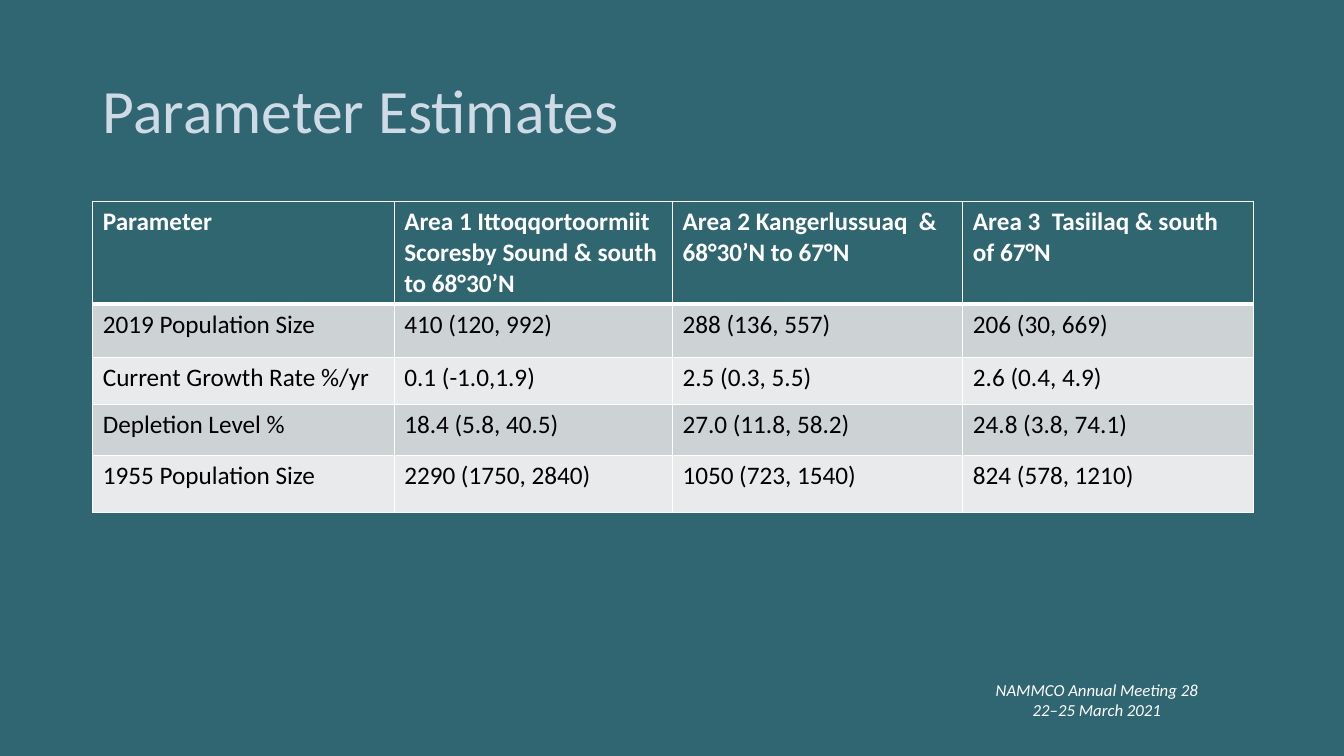
from dataclasses import dataclass

from lxml import etree
from pptx import Presentation
from pptx.dml.color import RGBColor
from pptx.enum.text import MSO_ANCHOR, PP_ALIGN
from pptx.oxml.ns import qn
from pptx.util import Inches, Pt

MIDDLE = MSO_ANCHOR.MIDDLE
LEFT, CENTER = PP_ALIGN.LEFT, PP_ALIGN.CENTER

FONT = "Calibri"
COLORS = {
    "background": "306672",
    "title": "CEDBE6",
    "header": "306670",
    "odd row": "CDD3D5",
    "even row": "E8EAEB",
    "light": "FFFFFF",
    "dark": "000000",
}
SLIDE_WIDTH, SLIDE_HEIGHT = 13.33, 7.5
MARGIN = 0.92
COLUMN_WIDTHS = (2.99, 2.76, 2.88, 2.88)
THIN, THICK = 1, 3


@dataclass(frozen=True)
class TextStyle:
    size: float
    color: str
    bold: bool = False
    italic: bool = False
    align: PP_ALIGN = LEFT


@dataclass(frozen=True)
class TableRow:
    height: float
    cells: tuple[str, ...]


TITLE_STYLE = TextStyle(44, "title")
HEADER_STYLE = TextStyle(18, "light", bold=True)
BODY_STYLE = TextStyle(18, "dark")
FOOTER_STYLE = TextStyle(12, "light", italic=True, align=CENTER)

ROWS = (
    TableRow(1.01, (
        "Parameter",
        "Area 1 Ittoqqortoormiit Scoresby Sound & south to 68°30’N",
        "Area 2 Kangerlussuaq  & 68°30’N to 67°N",
        "Area 3  Tasiilaq & south of 67°N",
    )),
    TableRow(0.53, ("2019 Population Size", "410 (120, 992)", "288 (136, 557)", "206 (30, 669)")),
    TableRow(0.47, ("Current Growth Rate %/yr", "0.1 (-1.0,1.9)", "2.5 (0.3, 5.5)", "2.6 (0.4, 4.9)")),
    TableRow(0.5, ("Depletion Level %", "18.4 (5.8, 40.5)", "27.0 (11.8, 58.2)", "24.8 (3.8, 74.1)")),
    TableRow(0.57, ("1955 Population Size", "2290 (1750, 2840)", "1050 (723, 1540)", "824 (578, 1210)")),
)


def rgb(name: str) -> RGBColor:
    return RGBColor.from_string(COLORS[name])


def write_text(frame, text: str, style: TextStyle) -> None:
    frame.text = text
    for para in frame.paragraphs:
        para.alignment = style.align
        for span in para.runs:
            span.font.name = FONT
            span.font.size = Pt(style.size)
            span.font.bold = style.bold
            span.font.italic = style.italic
            span.font.color.rgb = rgb(style.color)


def add_borders(cell, top: float, bottom: float) -> None:
    properties = cell._tc.get_or_add_tcPr()
    for side, width in (("L", THIN), ("R", THIN), ("T", top), ("B", bottom)):
        line = etree.SubElement(properties, qn(f"a:ln{side}"), w=str(Pt(width)))
        fill = etree.SubElement(line, qn("a:solidFill"))
        etree.SubElement(fill, qn("a:srgbClr"), val=COLORS["light"])


def add_title(page) -> None:
    title = page.shapes.title
    title.left, title.top = Inches(MARGIN), Inches(0.4)
    title.width, title.height = Inches(sum(COLUMN_WIDTHS)), Inches(1.45)
    write_text(title.text_frame, "Parameter Estimates", TITLE_STYLE)
    title.text_frame.vertical_anchor = MIDDLE
    title.text_frame.paragraphs[0].line_spacing = 0.9


def add_estimates(page) -> None:
    frame = page.shapes.add_table(
        len(ROWS), len(COLUMN_WIDTHS), Inches(MARGIN), Inches(2),
        Inches(sum(COLUMN_WIDTHS)), Inches(sum(row.height for row in ROWS)))
    table = frame.table
    for column, width in zip(table.columns, COLUMN_WIDTHS):
        column.width = Inches(width)
    for index, row in enumerate(ROWS):
        table.rows[index].height = Inches(row.height)
        is_header = index == 0
        band = "header" if is_header else "odd row" if index % 2 else "even row"
        for cell, text in zip(table.rows[index].cells, row.cells):
            write_text(cell.text_frame, text, HEADER_STYLE if is_header else BODY_STYLE)
            add_borders(cell, THICK if index == 1 else THIN, THICK if is_header else THIN)
            cell.fill.solid()
            cell.fill.fore_color.rgb = rgb(band)


def add_footer(page) -> None:
    box = page.shapes.add_textbox(Inches(9.73), Inches(6.74), Inches(2.3), Inches(0.4))
    box.text_frame.word_wrap = True
    box.text_frame.vertical_anchor = MIDDLE
    write_text(box.text_frame, "NAMMCO Annual Meeting 28\n22–25 March 2021", FOOTER_STYLE)


def main() -> None:
    deck = Presentation()
    deck.slide_width, deck.slide_height = Inches(SLIDE_WIDTH), Inches(SLIDE_HEIGHT)
    page = deck.slides.add_slide(deck.slide_layouts.get_by_name("Title Only"))
    page.background.fill.solid()
    page.background.fill.fore_color.rgb = rgb("background")
    # Heading, table of estimates, meeting line
    add_title(page)
    add_estimates(page)
    add_footer(page)
    deck.save("out.pptx")


if __name__ == "__main__":
    main()
